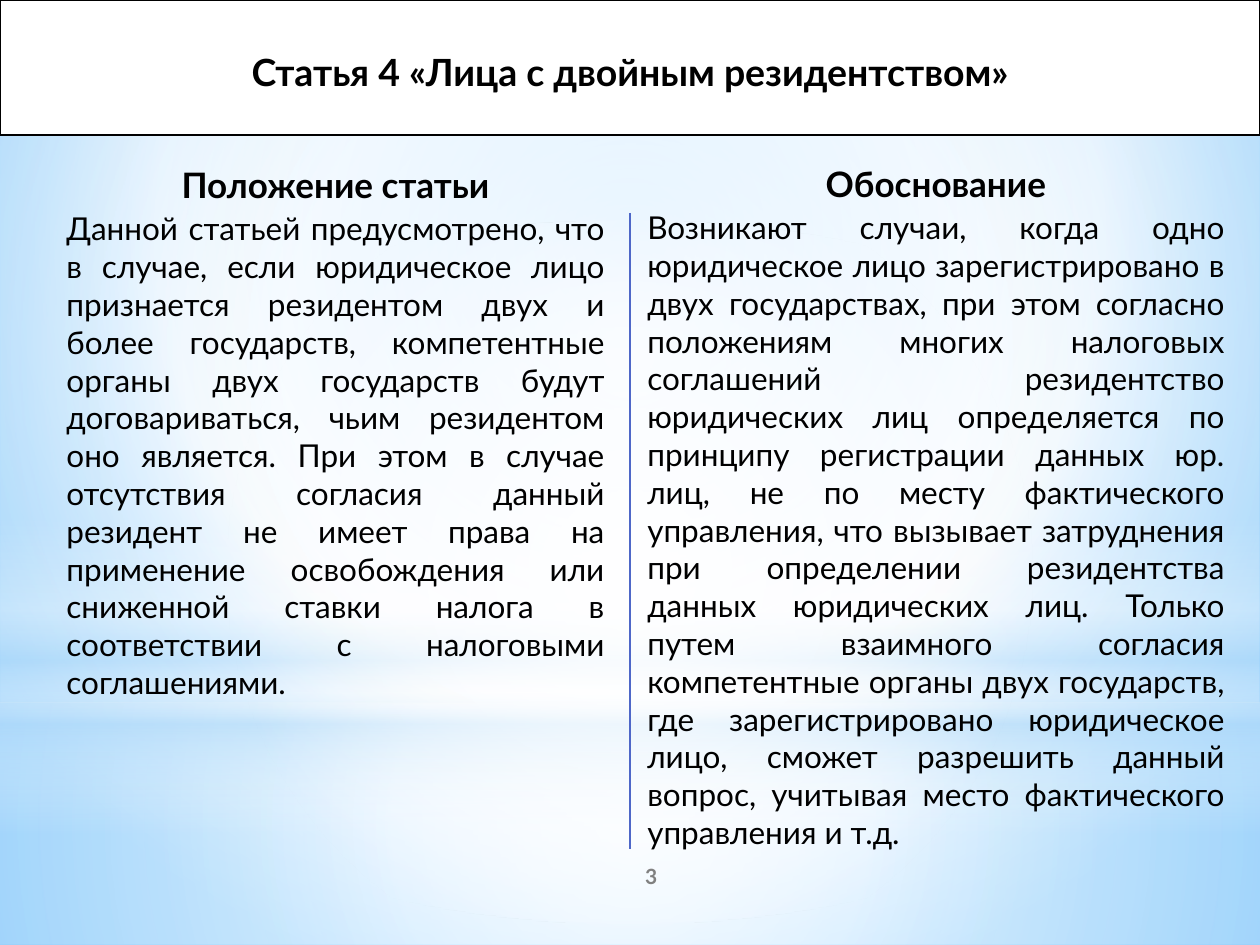
from dataclasses import dataclass

from lxml import etree
from pptx import Presentation
from pptx.dml.color import RGBColor
from pptx.enum.shapes import MSO_CONNECTOR, MSO_SHAPE
from pptx.enum.text import MSO_ANCHOR, PP_ALIGN
from pptx.oxml.ns import qn
from pptx.util import Cm, Pt


@dataclass(frozen=True)
class Theme:
    font: str = "Lato"
    ink: str = "000000"
    white: str = "FFFFFF"
    haze: str = "B4DCFA"
    sky: str = "9ED5FF"
    deep_sky: str = "5BB9FF"
    divider: str = "4E67C8"
    page_number: str = "808080"
    title_size: float = 21.4
    heading_size: float = 20
    body_size: float = 18
    number_size: float = 12


THEME = Theme()
WIDTH, HEIGHT = 25.4, 19.05
CENTRE = (50, 50, 50, 50)

PROVISION = (
    "Данной статьей предусмотрено, что в случае, если юридическое лицо "
    "признается резидентом двух и более государств, компетентные органы двух "
    "государств будут договариваться, чьим резидентом оно является. При этом "
    "в случае отсутствия согласия данный резидент не имеет права на "
    "применение освобождения или сниженной ставки налога в соответствии с "
    "налоговыми соглашениями."
)
RATIONALE = (
    "Возникают случаи, когда одно юридическое лицо зарегистрировано в двух "
    "государствах, при этом согласно положениям многих налоговых соглашений "
    "резидентство юридических лиц определяется по принципу регистрации данных "
    "юр. лиц, не по месту фактического управления, что вызывает затруднения "
    "при определении резидентства данных юридических лиц. Только путем "
    "взаимного согласия компетентные органы двух государств, где "
    "зарегистрировано юридическое лицо, сможет разрешить данный вопрос, "
    "учитывая место фактического управления и т.д."
)


def rgb(colour):
    return RGBColor.from_string(colour)


def box(left, top, width, height):
    return Cm(left), Cm(top), Cm(width), Cm(height)


def paint_gradient(properties, stops, focus=None):
    """Swap a solid fill for (position, colour, opacity) stops in percent.

    With a focus (left, top, right, bottom insets) it is radial, else vertical.
    """
    gradient = etree.Element(qn("a:gradFill"), rotWithShape="1")
    stop_list = etree.SubElement(gradient, qn("a:gsLst"))
    for position, colour, opacity in stops:
        stop = etree.SubElement(stop_list, qn("a:gs"), pos=str(position * 1000))
        tint = etree.SubElement(stop, qn("a:srgbClr"), val=colour)
        if opacity < 100:
            etree.SubElement(tint, qn("a:alpha"), val=str(opacity * 1000))
    if focus:
        radial = etree.SubElement(gradient, qn("a:path"), path="circle")
        insets = {side: str(value * 1000) for side, value in zip("ltrb", focus)}
        etree.SubElement(radial, qn("a:fillToRect"), **insets)
    else:
        etree.SubElement(gradient, qn("a:lin"), ang="5400000", scaled="0")
    properties.replace(properties.find(qn("a:solidFill")), gradient)


def add_glow(slide, geometry, top, height, stops, focus=None):
    glow = slide.shapes.add_shape(geometry, *box(0, top, WIDTH, height))
    glow.shadow.inherit = False
    glow.line.fill.background()
    glow.fill.solid()
    paint_gradient(glow.element.spPr, stops, focus)


def add_backdrop(slide):
    slide.background.fill.solid()
    paint_gradient(
        slide.element.find(".//" + qn("p:bgPr")),
        [(0, THEME.sky, 100), (60, THEME.white, 100), (100, THEME.deep_sky, 100)],
        (20, 10, 20, 60),
    )
    white, haze = THEME.white, THEME.haze
    horizon = 14.17
    add_glow(slide, MSO_SHAPE.RECTANGLE, horizon, HEIGHT - horizon,
             [(0, white, 91), (37, white, 76), (100, haze, 79)], CENTRE)
    add_glow(slide, MSO_SHAPE.RECTANGLE, 0, horizon,
             [(0, white, 89), (48, white, 62), (100, haze, 79)], CENTRE)
    add_glow(slide, MSO_SHAPE.RECTANGLE, 10.46, 6.35,
             [(0, white, 0), (29, white, 30), (45, haze, 40),
              (55, white, 26), (65, haze, 60), (100, white, 0)])
    add_glow(slide, MSO_SHAPE.OVAL, 4.45, horizon,
             [(0, white, 100), (56, white, 0)], CENTRE)


def write(paragraph, text, *, size, bold=True, colour=THEME.ink,
          align=PP_ALIGN.CENTER, before=0):
    paragraph.alignment = align
    paragraph.space_before = Pt(before)
    paragraph.line_spacing = 1.0
    run = paragraph.add_run()
    run.text = text
    run.font.name = THEME.font
    run.font.size = Pt(size)
    run.font.bold = bold
    run.font.color.rgb = rgb(colour)


def add_frame(slide, *place):
    frame = slide.shapes.add_textbox(*box(*place)).text_frame
    frame.word_wrap = True
    frame.vertical_anchor = MSO_ANCHOR.MIDDLE
    return frame


def add_column(slide, place, heading, body):
    frame = add_frame(slide, *place)
    write(frame.paragraphs[0], heading, size=THEME.heading_size, before=2)
    write(frame.add_paragraph(), body, size=THEME.body_size, bold=False,
          align=PP_ALIGN.JUSTIFY, before=2)


def set_title(slide, text):
    banner = slide.shapes.title
    banner.left, banner.top, banner.width, banner.height = box(0, 0, WIDTH, 2.72)
    banner.fill.solid()
    banner.fill.fore_color.rgb = rgb(THEME.white)
    banner.line.color.rgb = rgb(THEME.ink)
    banner.line.width = Pt(1.25)
    frame = banner.text_frame
    frame.vertical_anchor = MSO_ANCHOR.MIDDLE
    frame.margin_top, frame.margin_bottom = Cm(0.28), Cm(0.13)
    write(frame.paragraphs[0], text, size=THEME.title_size)
    # The placeholder comes first in the tree; lift it above the backdrop.
    slide.shapes.element.append(banner.element)


def add_divider(slide, x, top, bottom):
    divider = slide.shapes.add_connector(
        MSO_CONNECTOR.STRAIGHT, Cm(x), Cm(top), Cm(x), Cm(bottom))
    divider.line.color.rgb = rgb(THEME.divider)
    divider.line.width = Pt(0.75)
    etree.SubElement(divider.element.spPr, qn("a:effectLst"))


def main():
    deck = Presentation()
    deck.slide_width, deck.slide_height = Cm(WIDTH), Cm(HEIGHT)
    slide = deck.slides.add_slide(deck.slide_layouts.get_by_name("Title Only"))

    add_backdrop(slide)
    add_column(slide, (1.09, 2.72, 11.35, 11.99), "Положение статьи", PROVISION)
    set_title(slide, "Статья 4 «Лица с двойным резидентством»")
    add_column(slide, (12.8, 2.57, 12.14, 15.29), "Обоснование", RATIONALE)
    add_divider(slide, WIDTH / 2, 4.29, 17.12)
    page_number = add_frame(slide, 10.59, 17.15, 5.08, 1.02)
    write(page_number.paragraphs[0], "3", size=THEME.number_size,
          colour=THEME.page_number)

    deck.save("out.pptx")


if __name__ == "__main__":
    main()
